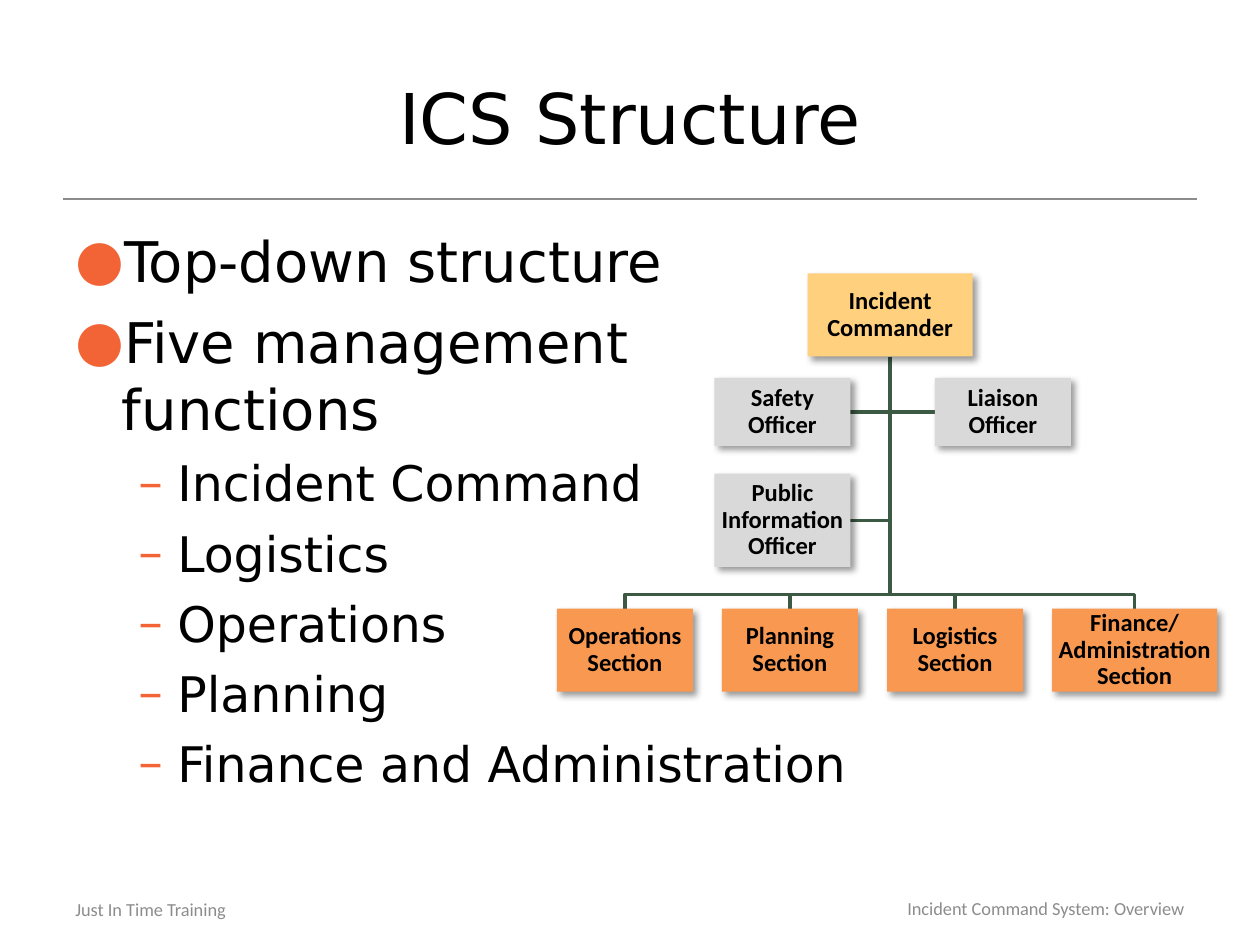
from lxml.etree import SubElement
from pptx import Presentation
from pptx.dml.color import RGBColor as RGB
from pptx.enum.shapes import MSO_CONNECTOR as CONN, MSO_SHAPE as SHAPE
from pptx.enum.text import MSO_ANCHOR as ANCHOR, PP_ALIGN as ALIGN
from pptx.oxml.ns import qn
from pptx.util import Inches, Pt

THEME = {
    "text": "000000", "muted": "8C8C8C", "accent": "F26336", "link": "3C5A43",
    "command": "FFD07D", "section": "F99951", "officer": "D9D9D9",
    "font": "DejaVu Sans", "small_font": "Calibri",
    "title": 40, "body": (32, 28), "box": 14, "footer": 10.5,
}
TITLE = "ICS Structure"
BULLETS = [
    (0, "Top-down structure"), (0, "Five management\nfunctions"),
    (1, "Incident Command"), (1, "Logistics"), (1, "Operations"),
    (1, "Planning"), (1, "Finance and Administration"),
]
LEVELS = [
    {"char": "●", "left": 0.37, "hang": 0.37, "before": 7.5},
    {"char": "–", "left": 0.81, "hang": 0.31, "before": 6.5},
]
FOOTERS = [
    ("Just In Time Training", (0.5, 7.08, 2.33, 0.27), ALIGN.LEFT),
    ("Incident Command System: Overview", (6.33, 7.08, 3.17, 0.25), ALIGN.RIGHT),
]
COMMANDER = ("Incident Commander", (6.41, 2.17, 1.31, 0.66))
OFFICERS = [
    ("Safety\nOfficer", (5.67, 3, 1.08, 0.54)),
    ("Liaison\nOfficer", (7.42, 3, 1.08, 0.54)),
    ("Public Information Officer", (5.67, 3.76, 1.08, 0.74)),
]
SECTIONS = [
    ("Operations Section", 1.08), ("Planning Section", 1.08),
    ("Logistics Section", 1.08), ("Finance/ Administration Section", 1.31),
]
SECTION_LEFT, SECTION_TOP, SECTION_HEIGHT, SECTION_GAP = 4.42, 4.83, 0.66, 0.23
BUS_Y = 4.72


def color(name):
    return RGB.from_string(THEME[name])


def add_runs(p, text, size, font, fill="text", bold=False):
    for i, line in enumerate(text.split("\n")):
        if i:
            p.add_line_break()
        r = p.add_run()
        r.text = line
        r.font.size, r.font.name, r.font.bold = Pt(size), font, bold
        r.font.color.rgb = color(fill)


def add_text(s, at, anchor=ANCHOR.MIDDLE):
    tf = s.shapes.add_textbox(*map(Inches, at)).text_frame
    tf.word_wrap, tf.vertical_anchor = True, anchor
    return tf


def add_bullet(p, level):
    pPr = p._p.get_or_add_pPr()
    pPr.set("marL", str(Inches(level["left"])))
    pPr.set("indent", str(-Inches(level["hang"])))
    SubElement(SubElement(pPr, qn("a:buClr")), qn("a:srgbClr"), val=THEME["accent"])
    SubElement(pPr, qn("a:buFont"), typeface=THEME["font"])
    SubElement(pPr, qn("a:buChar"), char=level["char"])


def add_body(s):
    tf = add_text(s, (0.5, 1.75, 9, 5.08), ANCHOR.TOP)
    for i, (depth, text) in enumerate(BULLETS):
        p = tf.add_paragraph() if i else tf.paragraphs[0]
        add_bullet(p, LEVELS[depth])
        p.level = depth
        p.space_before = Pt(LEVELS[depth]["before"] if i else 0)
        add_runs(p, text, THEME["body"][depth], THEME["font"])


def add_box(s, text, at, fill):
    sp = s.shapes.add_shape(SHAPE.RECTANGLE, *map(Inches, at))
    sp.fill.solid()
    sp.fill.fore_color.rgb = color(fill)
    sp.line.fill.background()
    sp.shadow.inherit = False
    effects = sp._element.spPr.find(qn("a:effectLst"))
    shadow = SubElement(effects, qn("a:outerShdw"), blurRad=str(Pt(4)),
                        dist=str(Pt(3)), dir="2700000", algn="tl", rotWithShape="0")
    black = SubElement(shadow, qn("a:srgbClr"), val="000000")
    SubElement(black, qn("a:alpha"), val="40000")
    tf = sp.text_frame
    tf.word_wrap, tf.vertical_anchor = True, ANCHOR.MIDDLE
    tf.margin_left = tf.margin_right = tf.margin_top = tf.margin_bottom = Inches(0.01)
    p = tf.paragraphs[0]
    p.alignment, p.line_spacing = ALIGN.CENTER, 0.9
    add_runs(p, text, THEME["box"], THEME["small_font"], bold=True)


def add_link(s, points):
    start, *rest = [(Inches(x), Inches(y)) for x, y in points]
    builder = s.shapes.build_freeform(*start)
    builder.add_line_segments(rest, close=False)
    sp = builder.convert_to_shape()
    sp.fill.background()
    sp.line.color.rgb, sp.line.width = color("link"), Pt(2)
    sp.shadow.inherit = False


def add_chart_of_command(s):
    left, top, width, height = COMMANDER[1]
    trunk, start = left + width / 2, top + height
    sections, x = [], SECTION_LEFT
    for text, w in SECTIONS:
        sections.append((text, (x, SECTION_TOP, w, SECTION_HEIGHT)))
        x += w + SECTION_GAP
    for _, (x, y, w, h) in OFFICERS:
        side, middle = (x + w if x < trunk else x), y + h / 2
        add_link(s, [(trunk, start), (trunk, middle), (side, middle)])
    for _, (x, y, w, _) in sections:
        center = x + w / 2
        add_link(s, [(trunk, start), (trunk, BUS_Y), (center, BUS_Y), (center, y)])
    groups = [("command", [COMMANDER]), ("section", sections), ("officer", OFFICERS)]
    for fill, boxes in groups:
        for text, at in boxes:
            add_box(s, text, at, fill)


def main():
    """Build the ICS structure slide."""
    prs = Presentation()
    prs.slide_width, prs.slide_height = Inches(10), Inches(7.5)
    s = prs.slides.add_slide(prs.slide_layouts[6])
    rule = s.shapes.add_connector(CONN.STRAIGHT, *map(Inches, (0.5, 1.58, 9.5, 1.58)))
    rule.line.color.rgb, rule.line.width = color("muted"), Pt(0.75)
    SubElement(rule._element.spPr, qn("a:effectLst"))
    p = add_text(s, (0.5, 0.3, 9, 1.25)).paragraphs[0]
    p.alignment = ALIGN.CENTER
    add_runs(p, TITLE, THEME["title"], THEME["font"])
    add_body(s)
    for text, at, align in FOOTERS:
        p = add_text(s, at).paragraphs[0]
        p.alignment = align
        add_runs(p, text, THEME["footer"], THEME["small_font"], "muted")
    add_chart_of_command(s)
    prs.save("out.pptx")


if __name__ == "__main__":
    main()
